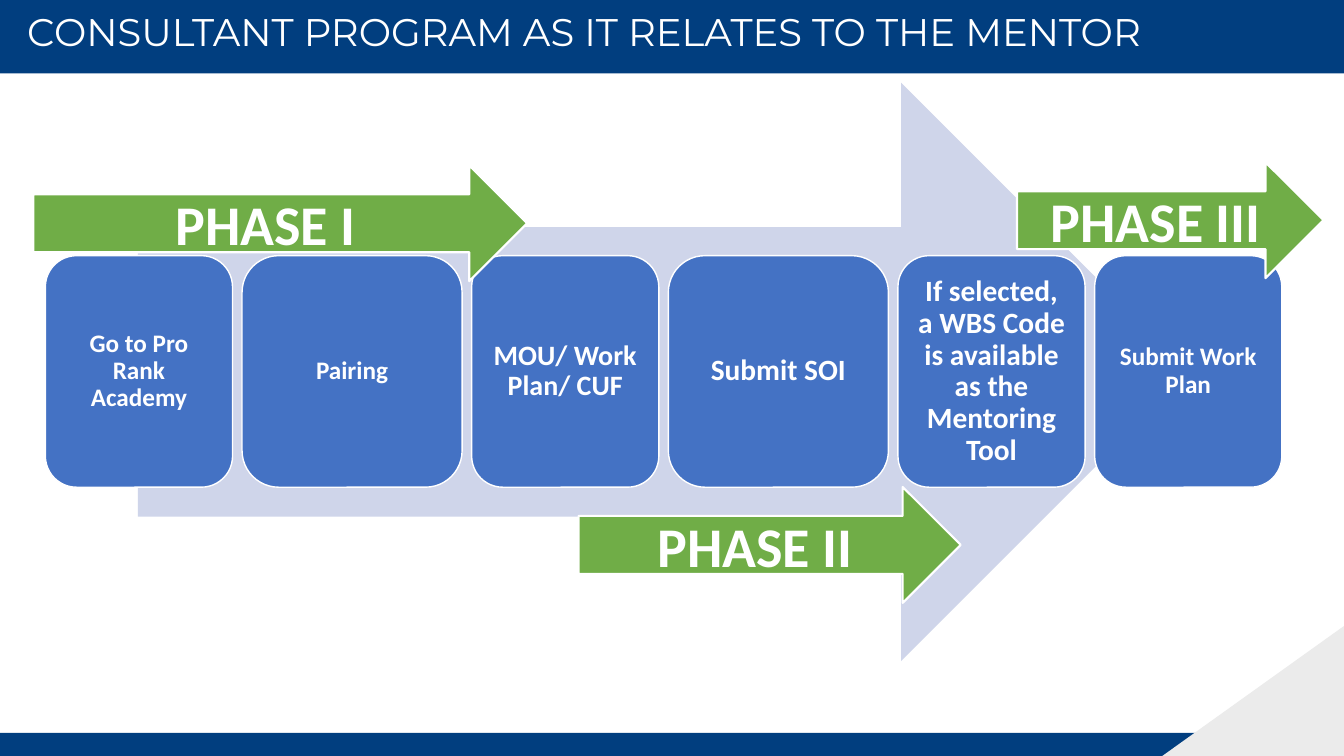
import pptx
import pptx.util
import pptx.dml.color
import pptx.enum.shapes
import pptx.enum.text
from dataclasses import dataclass

Pt = pptx.util.Pt
Kind = pptx.enum.shapes.MSO_SHAPE
Align = pptx.enum.text.PP_ALIGN
Anchor = pptx.enum.text.MSO_ANCHOR


# Colours and type
@dataclass(frozen=True)
class Theme:
    navy: str = "013E7F"
    grey: str = "EBEBEB"
    pale: str = "CFD5EA"
    blue: str = "4472C4"
    green: str = "70AD47"
    white: str = "FFFFFF"
    head: str = "Montserrat"
    body: str = "Calibri"
    title: float = 27.5
    phase: float = 40
    large: float = 21
    mid: float = 20
    small: float = 18


def rgb(code):
    return pptx.dml.color.RGBColor.from_string(code)


def write(frame, text, *, font, size, color, bold=False, align=Align.CENTER,
          anchor=Anchor.MIDDLE, space=1.0, inset=None):
    frame.word_wrap = True
    frame.auto_size = pptx.enum.text.MSO_AUTO_SIZE.NONE
    frame.vertical_anchor = anchor
    if inset is not None:
        frame.margin_left = frame.margin_right = Pt(inset)
        frame.margin_top = frame.margin_bottom = Pt(inset)
    para = frame.paragraphs[0]
    para.alignment = align
    para.line_spacing = space
    para.space_before = Pt(0)
    run = para.add_run()
    run.text = text
    run.font.name = font
    run.font.size = Pt(size)
    run.font.bold = bold
    run.font.color.rgb = rgb(color)


class Board:
    def __init__(self, slide, theme):
        self.slide = slide
        self.theme = theme

    def shape(self, kind, x, y, w, h, fill, line=0):
        item = self.slide.shapes.add_shape(kind, Pt(x), Pt(y), Pt(w), Pt(h))
        item.shadow.inherit = False
        item.fill.solid()
        item.fill.fore_color.rgb = rgb(fill)
        if line:
            item.line.color.rgb = rgb(self.theme.white)
            item.line.width = Pt(line)
        else:
            item.line.fill.background()
        return item

    def title(self, text, x, y, w, h):
        t = self.theme
        item = self.slide.shapes.title
        item.left, item.top, item.width, item.height = Pt(x), Pt(y), Pt(w), Pt(h)
        write(item.text_frame, text, font=t.head, size=t.title, color=t.white,
              align=Align.LEFT, anchor=Anchor.TOP, space=0.7)
        item.text_frame.margin_top = Pt(6.5)
        # Bring the title in front of its bar
        item.element.getparent().append(item.element)

    def step(self, text, size, x, y, w, h):
        t = self.theme
        item = self.shape(Kind.ROUNDED_RECTANGLE, x, y, w, h, t.blue, 1)
        write(item.text_frame, text, font=t.body, size=size, color=t.white,
              bold=True, space=0.9, inset=0.3 * size)

    def phase(self, text, x, y, w, h):
        t = self.theme
        item = self.shape(Kind.RIGHT_ARROW, x, y, w, h, t.green, 1.5)
        write(item.text_frame, text, font=t.body, size=t.phase, color=t.white,
              bold=True)


def main():
    theme = Theme()
    deck = pptx.Presentation()
    wide, high = 960, 540
    deck.slide_width, deck.slide_height = Pt(wide), Pt(high)
    board = Board(deck.slides.add_slide(deck.slide_layouts[5]), theme)

    # Frame of the slide
    board.shape(Kind.RECTANGLE, 0, 523.5, wide, 16.5, theme.navy)
    corner = board.shape(Kind.RIGHT_TRIANGLE, 830.3, 447.2, 129.7, 92.8, theme.grey)
    corner.element.spPr.xfrm.set("flipH", "1")
    board.shape(Kind.RECTANGLE, 0, 0, wide, 52.4, theme.navy)
    board.title("CONSULTANT PROGRAM AS IT RELATES TO THE MENTOR",
                12.2, 7.9, 933.1, 57.6)

    # Steps on the wide arrow
    board.shape(Kind.RIGHT_ARROW, 98.6, 59, 751.7, 413.3, theme.pale)
    slim, broad, gap = 133.7, 157.2, 6.8
    steps = [
        ("Go to Pro Rank Academy", theme.small, slim),
        ("Pairing", theme.small, broad),
        ("MOU/ Work Plan/ CUF", theme.mid, slim),
        ("Submit SOI", theme.large, broad),
        ("If selected, a WBS Code is available as the Mentoring Tool",
         theme.large, slim),
        ("Submit Work Plan", theme.small, slim),
    ]
    x = 32.4
    for text, size, w in steps:
        board.step(text, size, x, 182.6, w, 165.4)
        x += w + gap

    # Phase arrows
    for text, x, y, w in [("PHASE I", 23.8, 118.1, 352.8),
                          ("PHASE II", 413.3, 347.8, 272.9),
                          ("PHASE III", 726.5, 115.9, 218.9)]:
        board.phase(text, x, y, w, 82.8)

    deck.save("out.pptx")


if __name__ == "__main__":
    main()
